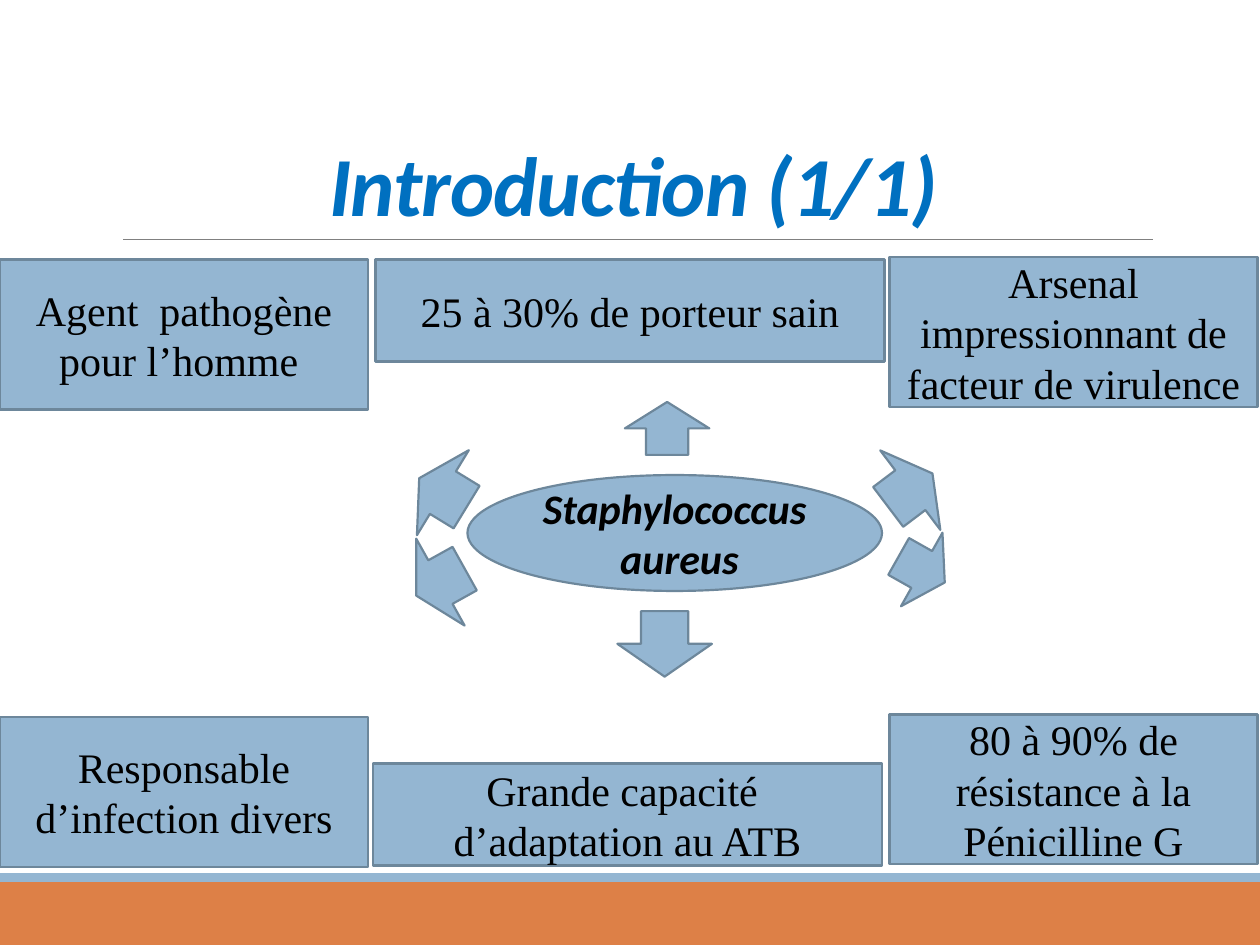
from dataclasses import dataclass

import pptx
import pptx.dml.color
import pptx.enum.shapes
import pptx.enum.text
import pptx.oxml.ns
import pptx.util
from lxml import etree
from pptx.util import Inches

RGBColor = pptx.dml.color.RGBColor
Shape = pptx.enum.shapes.MSO_SHAPE
Anchor = pptx.enum.text.MSO_ANCHOR

ORANGE = RGBColor(0xDD, 0x80, 0x47)
LIGHT_BLUE = RGBColor(0x94, 0xB6, 0xD2)
OUTLINE_BLUE = RGBColor(0x6D, 0x87, 0x9B)
TITLE_BLUE = RGBColor(0x00, 0x70, 0xC0)
GREY = RGBColor(0x80, 0x80, 0x80)
BLACK = RGBColor(0, 0, 0)

SIDE_SIZE = (2.92, 1.19)
MIDDLE_SIZE = (4.04, 0.81)
SLANTED_SIZE = (0.79, 0.44)
UPWARD_SIZE = (0.67, 0.42)


@dataclass
class Fact:
    text: str
    left: float
    top: float
    size: tuple[float, float]


@dataclass
class Arrow:
    kind: Shape
    left: float
    top: float
    size: tuple[float, float]
    rotation: float = 0


FACTS = [
    Fact("Agent  pathogène pour l’homme ", 0, 2.06, SIDE_SIZE),
    Fact("25 à 30% de porteur sain", 2.98, 2.06, MIDDLE_SIZE),
    Fact("Arsenal impressionnant de facteur de virulence ", 7.06, 2.04, SIDE_SIZE),
    Fact("Responsable d’infection divers", 0, 5.69, SIDE_SIZE),
    Fact("Grande capacité  d’adaptation au ATB", 2.96, 6.06, MIDDLE_SIZE),
    Fact("80 à 90% de résistance à la Pénicilline G", 7.06, 5.67, SIDE_SIZE),
]

ARROWS = [
    Arrow(Shape.DOWN_ARROW, 3.12, 3.69, SLANTED_SIZE, 121.4),
    Arrow(Shape.UP_ARROW, 4.96, 3.19, UPWARD_SIZE),
    Arrow(Shape.DOWN_ARROW, 6.83, 3.67, SLANTED_SIZE, 232.9),
    Arrow(Shape.DOWN_ARROW, 3.1, 4.4, SLANTED_SIZE, 60.9),
    Arrow(Shape.DOWN_ARROW, 4.9, 4.85, (0.75, 0.52)),
    Arrow(Shape.UP_ARROW, 6.98, 4.31, UPWARD_SIZE, 119.4),
]


def add_filled(page, kind: Shape, left: float, top: float, size: tuple[float, float],
               fill: RGBColor = LIGHT_BLUE, outlined: bool = True):
    """Draw a preset shape with a flat fill."""
    shape = page.shapes.add_shape(kind, Inches(left), Inches(top), *map(Inches, size))
    shape.shadow.inherit = False
    shape.fill.solid()
    shape.fill.fore_color.rgb = fill
    if outlined:
        shape.line.color.rgb = OUTLINE_BLUE
        shape.line.width = pptx.util.Pt(1.25)
    else:
        shape.line.fill.background()
    return shape


def write_text(box, text: str, *, font: str = "Times New Roman", size: float = 24,
               color: RGBColor = BLACK, emphasis: bool = False,
               anchor: Anchor = Anchor.MIDDLE):
    """Write one centred paragraph and return it."""
    frame = box.text_frame
    frame.word_wrap = True
    frame.vertical_anchor = anchor
    para = frame.paragraphs[0]
    para.alignment = pptx.enum.text.PP_ALIGN.CENTER
    span = para.add_run()
    span.text = text
    span.font.name = font
    span.font.size = pptx.util.Pt(size)
    span.font.color.rgb = color
    span.font.bold = span.font.italic = emphasis
    return para


def add_title(page, text: str) -> None:
    box = page.shapes.add_textbox(Inches(0.9), Inches(0.31), Inches(8.25), Inches(1.59))
    para = write_text(box, text, font="Calibri", size=48, color=TITLE_BLUE,
                      emphasis=True, anchor=Anchor.BOTTOM)
    para.line_spacing = 0.85
    para.runs[0].font._element.set("spc", "-50")


def add_rule(page) -> None:
    rule = page.shapes.add_connector(pptx.enum.shapes.MSO_CONNECTOR.STRAIGHT,
                                     Inches(0.98), Inches(1.9), Inches(9.15), Inches(1.9))
    rule.line.color.rgb = GREY
    rule.line.width = pptx.util.Pt(0.5)
    etree.SubElement(rule._element.spPr, pptx.oxml.ns.qn("a:effectLst"))


def add_fact(page, fact: Fact) -> None:
    box = add_filled(page, Shape.RECTANGLE, fact.left, fact.top, fact.size)
    write_text(box, fact.text)


def add_arrow(page, arrow: Arrow) -> None:
    shape = add_filled(page, arrow.kind, arrow.left, arrow.top, arrow.size)
    shape.rotation = arrow.rotation


def main() -> None:
    deck = pptx.Presentation()
    deck.slide_width, deck.slide_height = Inches(10), Inches(7.5)
    page = deck.slides.add_slide(deck.slide_layouts[6])

    # Footer bands
    add_filled(page, Shape.RECTANGLE, 0, 7, (10, 0.5), ORANGE, outlined=False)
    add_filled(page, Shape.RECTANGLE, 0, 6.93, (10, 0.07), outlined=False)

    # Title and the rule below it
    add_rule(page)
    add_title(page, "Introduction (1/1)")

    # Central subject with arrows towards the facts around it
    subject = add_filled(page, Shape.OVAL, 3.71, 3.77, (3.29, 0.92))
    write_text(subject, "Staphylococcus  aureus", font="Calibri", emphasis=True)
    for arrow in ARROWS:
        add_arrow(page, arrow)
    for fact in FACTS:
        add_fact(page, fact)

    deck.save("out.pptx")


if __name__ == "__main__":
    main()
